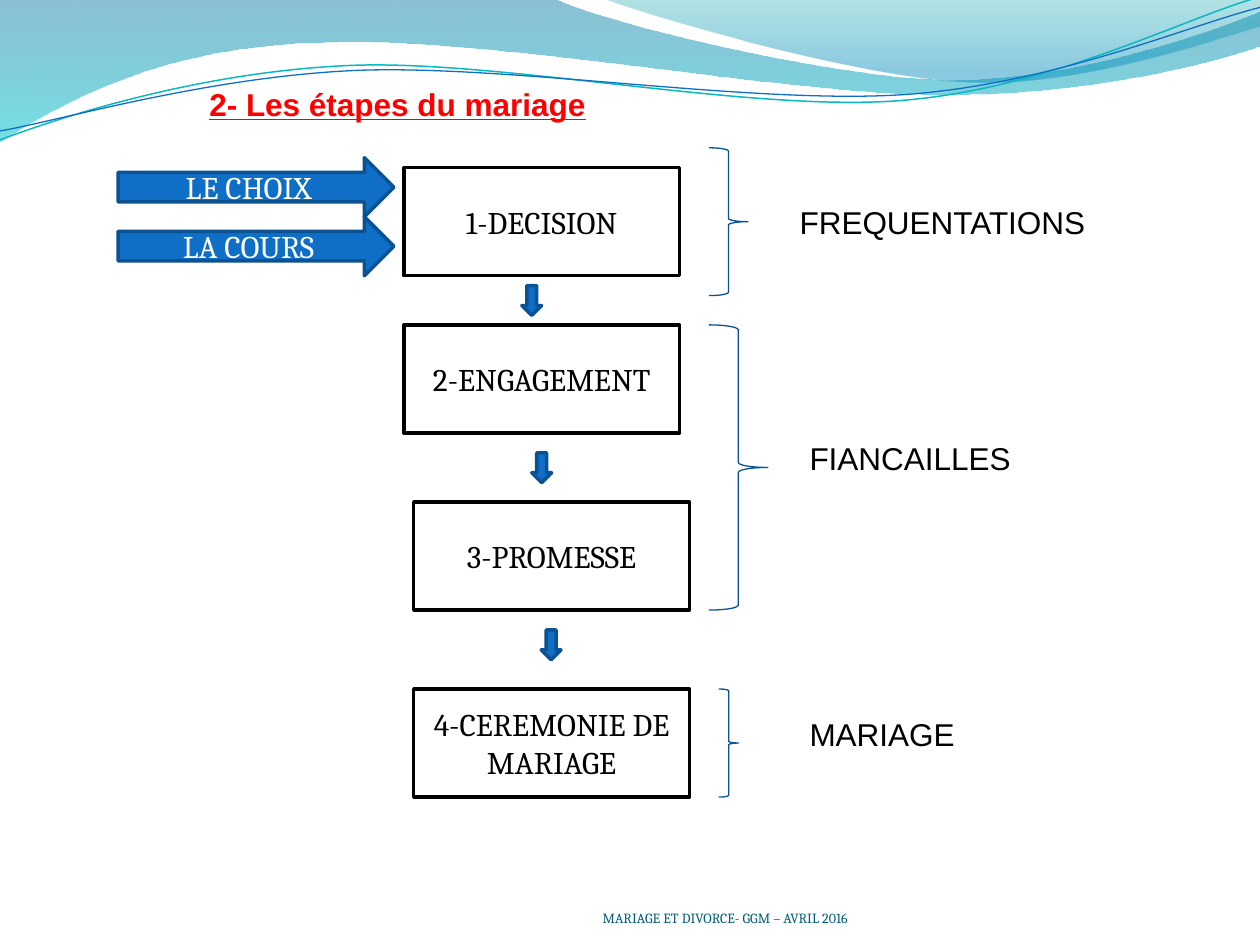
from math import cos, radians, sin

from lxml import etree
from pptx import Presentation
from pptx.dml.color import RGBColor
from pptx.enum.shapes import MSO_SHAPE
from pptx.enum.text import MSO_ANCHOR, PP_ALIGN
from pptx.oxml.ns import qn
from pptx.util import Cm, Pt

RECTANGLE, BRACE = MSO_SHAPE.RECTANGLE, MSO_SHAPE.RIGHT_BRACE
RIGHT_ARROW, DOWN_ARROW = MSO_SHAPE.RIGHT_ARROW, MSO_SHAPE.DOWN_ARROW
LEFT, CENTER = PP_ALIGN.LEFT, PP_ALIGN.CENTER
TOP, MIDDLE, BOTTOM = MSO_ANCHOR.TOP, MSO_ANCHOR.MIDDLE, MSO_ANCHOR.BOTTOM
BLUE, DARK_BLUE, BLACK, WHITE = "0F6FC6", "0B5292", "000000", "FFFFFF"


def color(value):
    return RGBColor.from_string(value)


def write(shape, text, font="Cambria", size=18, ink=BLACK, align=CENTER,
          anchor=MIDDLE, wrap=True, bold=False, underline=False):
    frame = shape.text_frame
    frame.word_wrap = wrap
    frame.vertical_anchor = anchor
    paragraph = frame.paragraphs[0]
    paragraph.alignment = align
    run = paragraph.add_run()
    run.text = text
    run.font.name, run.font.size = font, Pt(size)
    run.font.bold, run.font.underline = bold, underline
    run.font.color.rgb = color(ink)


presentation = Presentation()
presentation.slide_width, presentation.slide_height = Cm(25.4), Cm(19.05)
slide = presentation.slides.add_slide(presentation.slide_layouts[6])
shapes = slide.shapes

# Waves in cm: one point is a straight edge, three points are a Bezier curve
bands = [
    ((0, -0.03),
     [[(11.18, -0.03)],
      [(12.09, 0.43), (16.87, 1.6), (19.25, 1.6)],
      [(21.67, 1.6), (24.33, 0.66), (25.4, 0.23)],
      [(25.43, 0.91)],
      [(24.97, 1.12), (22.1, 1.93), (18.95, 1.91)],
      [(15.8, 1.91), (9.7, 0.71), (6.53, 0.86)],
      [(3.28, 0.89), (1.17, 2.11), (-0.03, 2.87)]],
     [(0, "0074A1", 45), (1, "00C6CF", 55)], None),
    ((12.17, -0.03),
     [[(12.93, 0.28), (17.32, 1.57), (19.53, 1.65)],
      [(21.74, 1.75), (24.41, 0.81), (25.4, 0.53)],
      [(25.4, 0)]],
     [(0, "00A1A9", 30), (0.8, "008BBF", 45)], None),
    ((0, 2.82),
     [[(1.22, 2.36), (4.01, 1.45), (7.04, 1.32)],
      [(10.03, 1.19), (15.06, 2.26), (18.11, 2.03)],
      [(21.16, 1.8), (23.83, 0.38), (25.35, -0.05)]],
     None, ("0AB8BF", 0.85, 12.67, 1.46)),
    ((0, 2.64),
     [[(1.19, 2.44), (4.17, 1.55), (7.19, 1.42)],
      [(10.24, 1.3), (15.16, 2.11), (18.21, 1.91)],
      [(21.23, 1.7), (23.9, 0.53), (25.4, 0.15)]],
     None, (BLUE, 0.75, 12.69, 1.5)),
]
TILT = 2.7
cosine, sine = cos(radians(TILT)), sin(radians(TILT))
for start, segments, stops, line in bands:
    points = [start] + [point for segment in segments for point in segment]
    if line:
        # Level the line about its centre; the shape's rotation tilts it back
        ink, width, center_x, center_y = line
        points = [(center_x + (x - center_x) * cosine - (y - center_y) * sine,
                   center_y + (x - center_x) * sine + (y - center_y) * cosine)
                  for x, y in points]
    outline = [(Cm(x), Cm(y)) for x, y in points]
    builder = shapes.build_freeform(*outline[0])
    builder.add_line_segments(outline[1:], close=stops is not None)
    wave = builder.convert_to_shape()
    wave.shadow.inherit = False

    # Join each group of three points into one curve
    edges = iter(list(wave._element.iter(qn("a:lnTo"))))
    for segment in segments:
        group = [next(edges) for _ in segment]
        if len(group) == 3:
            curve = etree.Element(qn("a:cubicBezTo"))
            group[0].addprevious(curve)
            for edge in group:
                curve.append(edge[0])
                edge.getparent().remove(edge)

    if stops:
        wave.line.fill.background()
        wave.fill.gradient()
        wave.fill.gradient_angle = 270
        for stop, (position, value, opacity) in zip(wave.fill.gradient_stops, stops):
            stop.position = position
            stop.color.rgb = color(value)
        for element, (position, value, opacity) in zip(wave._element.iter(qn("a:srgbClr")), stops):
            etree.SubElement(element, qn("a:alpha")).set("val", str(opacity * 1000))
    else:
        wave.rotation = 360 - TILT
        wave.fill.background()
        wave.line.color.rgb = color(ink)
        wave.line.width = Pt(width)

# Footer
footer = shapes.add_textbox(Cm(7.41), Cm(17.65), Cm(14.43), Cm(1.02))
frame = footer.text_frame
frame.margin_left = frame.margin_right = frame.margin_top = frame.margin_bottom = 0
write(footer, "MARIAGE ET DIVORCE- GGM – AVRIL 2016", size=8, ink="045D75", anchor=BOTTOM)

# Steps, entry arrows, arrows between steps
step_size, entry_size, link_size = (5.56, 2.18), (5.56, 1.19), (0.4, 0.6)
blocks = [
    (RECTANGLE, 8.14, 3.38, step_size, "1-DECISION"),
    (RECTANGLE, 8.14, 6.55, step_size, "2-ENGAGEMENT"),
    (RECTANGLE, 8.34, 10.12, step_size, "3-PROMESSE"),
    (RECTANGLE, 8.34, 13.89, step_size, "4-CEREMONIE DE MARIAGE"),
    (RIGHT_ARROW, 2.38, 3.18, entry_size, "LE CHOIX"),
    (RIGHT_ARROW, 2.38, 4.37, entry_size, "LA COURS"),
    (DOWN_ARROW, 10.52, 5.76, link_size, None),
    (DOWN_ARROW, 10.72, 9.13, link_size, None),
    (DOWN_ARROW, 10.91, 12.7, link_size, None),
]
for kind, left, top, (width, height), text in blocks:
    is_step = kind == RECTANGLE
    block = shapes.add_shape(kind, Cm(left), Cm(top), Cm(width), Cm(height))
    block.shadow.inherit = False
    block.fill.solid()
    block.fill.fore_color.rgb = color(WHITE if is_step else BLUE)
    block.line.color.rgb = color(BLACK if is_step else DARK_BLUE)
    block.line.width = Pt(2)
    if text:
        write(block, text, ink=BLACK if is_step else WHITE)

# Title
title = shapes.add_textbox(Cm(3.97), Cm(1.58), Cm(10.52), Cm(1.8))
write(title, "2- Les étapes du mariage", font="Arial", ink="FF0000",
      align=LEFT, anchor=TOP, bold=True, underline=True)

# Braces with the period each one spans
periods = [
    ((14.29, 2.98, 0.79, 2.98), (15.87, 3.97, 6.32), "FREQUENTATIONS"),
    ((14.29, 6.55, 1.19, 5.75), (16.07, 8.73, 4.6), "FIANCAILLES"),
    ((14.49, 13.89, 0.4, 2.18), (16.07, 14.29, 3.48), "MARIAGE"),
]
for brace_box, (left, top, width), text in periods:
    brace = shapes.add_shape(BRACE, *[Cm(length) for length in brace_box])
    brace.shadow.inherit = False
    brace.fill.background()
    brace.line.color.rgb = color("095295")
    brace.line.width = Pt(0.75)
    label = shapes.add_textbox(Cm(left), Cm(top), Cm(width), Cm(1.02))
    write(label, text, font="Arial", align=LEFT, anchor=TOP, wrap=False)

presentation.save("out.pptx")
